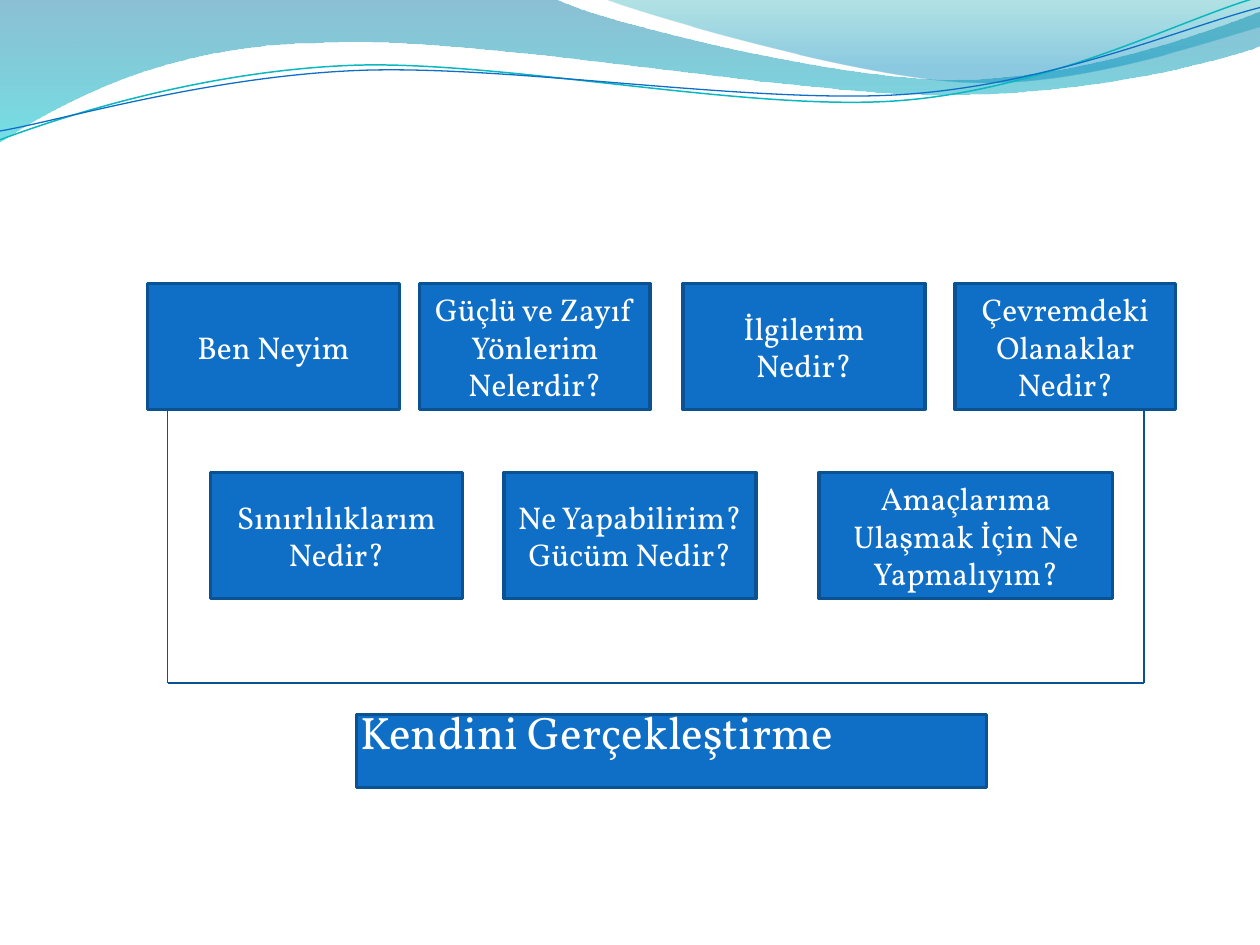
from lxml import etree
from pptx import Presentation
from pptx.dml.color import RGBColor
from pptx.enum.shapes import MSO_CONNECTOR, MSO_SHAPE
from pptx.enum.text import MSO_ANCHOR, MSO_AUTO_SIZE, PP_ALIGN
from pptx.oxml.ns import qn
from pptx.util import Inches, Pt

RECT, STRAIGHT = MSO_SHAPE.RECTANGLE, MSO_CONNECTOR.STRAIGHT
MIDDLE, TOP = MSO_ANCHOR.MIDDLE, MSO_ANCHOR.TOP
CENTER, LEFT = PP_ALIGN.CENTER, PP_ALIGN.LEFT
NO_FIT = MSO_AUTO_SIZE.NONE

THEME = {
    "font": "Vollkorn", "box_size": 18, "goal_size": 26,
    "text": "FFFFFF", "fill": "0F6FC6", "border": "0B5292", "bracket": "095295",
    "border_width": 2, "bracket_width": 0.75,
}

ROWS = [
    (2.25, [
        (1.17, 2, ["Ben Neyim"]),
        (3.33, 1.83, ["Güçlü ve Zayıf Yönlerim Nelerdir?"]),
        (5.42, 1.92, ["İlgilerim Nedir?"]),
        (7.58, 1.75, ["Çevremdeki Olanaklar Nedir?"]),
    ]),
    (3.75, [
        (1.67, 2, ["Sınırlılıklarım Nedir?"]),
        (4, 2, ["Ne Yapabilirim?", "Gücüm Nedir?"]),
        (6.5, 2.33, ["Amaçlarıma Ulaşmak İçin Ne Yapmalıyım?"]),
    ]),
]
BOX_HEIGHT = 1
GOAL = "Kendini Gerçekleştirme"
GOAL_BAR = (2.83, 5.67, 5, 0.58)
GOAL_TEXT = (2.83, 5.59, 5, 0.58)
BRACKET = [(1.33, 3.25), (1.33, 5.42), (9.08, 5.42), (9.08, 3.25)]

# Each segment holds one end point (line) or three points (cubic curve).
WAVES = [
    {"start": (0, -0.01), "segments": [
        [(4.4, -0.01)],
        [(4.76, 0.17), (6.64, 0.63), (7.58, 0.63)],
        [(8.53, 0.63), (9.58, 0.26), (10, 0.09)],
        [(10.01, 0.36)],
        [(9.83, 0.44), (8.7, 0.76), (7.46, 0.75)],
        [(6.22, 0.75), (3.82, 0.28), (2.57, 0.34)],
        [(1.29, 0.35), (0.46, 0.83), (-0.01, 1.13)]],
     "stops": [(0, "0074A1", 45), (1, "00C6CF", 55)]},
    {"start": (4.79, -0.01), "segments": [
        [(5.09, 0.11), (6.82, 0.62), (7.69, 0.65)],
        [(8.56, 0.69), (9.61, 0.32), (10, 0.21)],
        [(10, 0)]],
     "stops": [(0, "00A1A9", 30), (0.8, "008BBF", 45)]},
    {"start": (0, 1.11), "segments": [
        [(0.48, 0.93), (1.58, 0.57), (2.77, 0.52)],
        [(3.95, 0.47), (5.93, 0.89), (7.13, 0.8)],
        [(8.33, 0.71), (9.38, 0.15), (9.98, -0.02)]],
     "line": ("0AB8BF", 0.85)},
    {"start": (0, 1.04), "segments": [
        [(0.47, 0.96), (1.64, 0.61), (2.83, 0.56)],
        [(4.03, 0.51), (5.97, 0.83), (7.17, 0.75)],
        [(8.36, 0.67), (9.41, 0.21), (10, 0.06)]],
     "line": ("0F6FC6", 0.75)},
]
UNITS = 1000


def rgb(value):
    return RGBColor.from_string(value)


def set_line(s, color, width):
    s.line.color.rgb = rgb(color)
    s.line.width = Pt(width)


def bend(s, segments, origin):
    lines = list(s.element.spPr.iter(qn("a:lnTo")))
    for line, segment in zip(lines, segments):
        if len(segment) == 1:
            continue
        curve = etree.Element(qn("a:cubicBezTo"))
        for point in segment:
            pt = etree.SubElement(curve, qn("a:pt"))
            for name, value, zero in zip("xy", point, origin):
                pt.set(name, str(round((value - zero) * UNITS)))
        line.getparent().replace(line, curve)


def add_wave(shapes, wave):
    segments = wave["segments"]
    anchors = [wave["start"], *(segment[-1] for segment in segments)]
    scaled = [(round(x * UNITS), round(y * UNITS)) for x, y in anchors]
    builder = shapes.build_freeform(*scaled[0], scale=Inches(1) / UNITS)
    builder.add_line_segments(scaled[1:], close="stops" in wave)
    s = builder.convert_to_shape()
    bend(s, segments, [min(axis) for axis in zip(*anchors)])
    s.shadow.inherit = False
    if "line" in wave:
        s.fill.background()
        set_line(s, *wave["line"])
        return
    s.line.fill.background()
    s.fill.gradient()
    s.fill.gradient_angle = 270
    for stop, (position, color, _) in zip(s.fill.gradient_stops, wave["stops"]):
        stop.position = position
        stop.color.rgb = rgb(color)
    colors = s.element.spPr.find(qn("a:gradFill")).iter(qn("a:srgbClr"))
    for color, (_, _, opacity) in zip(colors, wave["stops"]):
        etree.SubElement(color, qn("a:alpha")).set("val", str(opacity * 1000))


def write(tf, lines, size, align):
    for i, line in enumerate(lines):
        p = tf.paragraphs[0] if i == 0 else tf.add_paragraph()
        p.alignment = align
        r = p.add_run()
        r.text = line
        for name, value in {"name": THEME["font"], "size": Pt(size)}.items():
            setattr(r.font, name, value)
        r.font.color.rgb = rgb(THEME["text"])


def add_box(shapes, area):
    s = shapes.add_shape(RECT, *map(Inches, area))
    s.shadow.inherit = False
    s.fill.solid()
    s.fill.fore_color.rgb = rgb(THEME["fill"])
    set_line(s, THEME["border"], THEME["border_width"])
    return s


def add_goal(slide):
    add_box(slide.shapes, GOAL_BAR)
    body = slide.placeholders[1]
    for name, value in zip(("left", "top", "width", "height"), GOAL_TEXT):
        setattr(body, name, Inches(value))
    tf = body.text_frame
    fmt = {"margin_left": Inches(0.03), "margin_right": 0, "margin_top": 0,
           "margin_bottom": 0, "vertical_anchor": TOP, "auto_size": NO_FIT,
           "word_wrap": True}
    for name, value in fmt.items():
        setattr(tf, name, value)
    pPr = tf.paragraphs[0]._p.get_or_add_pPr()
    pPr.set("marL", "0")
    pPr.set("indent", "0")
    etree.SubElement(pPr, qn("a:buNone"))
    tf.paragraphs[0].space_before = Pt(0)
    write(tf, [GOAL], THEME["goal_size"], LEFT)
    slide.shapes._spTree.append(body.element)


def main():
    prs = Presentation()
    prs.slide_width, prs.slide_height = Inches(10), Inches(7.5)
    slide = prs.slides.add_slide(prs.slide_layouts[1])
    title = slide.shapes.title.element
    title.getparent().remove(title)
    shapes = slide.shapes

    for wave in WAVES:
        add_wave(shapes, wave)
    for top, boxes in ROWS:
        for left, width, lines in boxes:
            tf = add_box(shapes, (left, top, width, BOX_HEIGHT)).text_frame
            tf.word_wrap = True
            tf.vertical_anchor = MIDDLE
            write(tf, lines, THEME["box_size"], CENTER)
    add_goal(slide)
    for start, end in zip(BRACKET, BRACKET[1:]):
        s = shapes.add_connector(STRAIGHT, *map(Inches, start + end))
        set_line(s, THEME["bracket"], THEME["bracket_width"])
        etree.SubElement(s.element.spPr, qn("a:effectLst"))

    prs.save("out.pptx")


if __name__ == "__main__":
    main()
